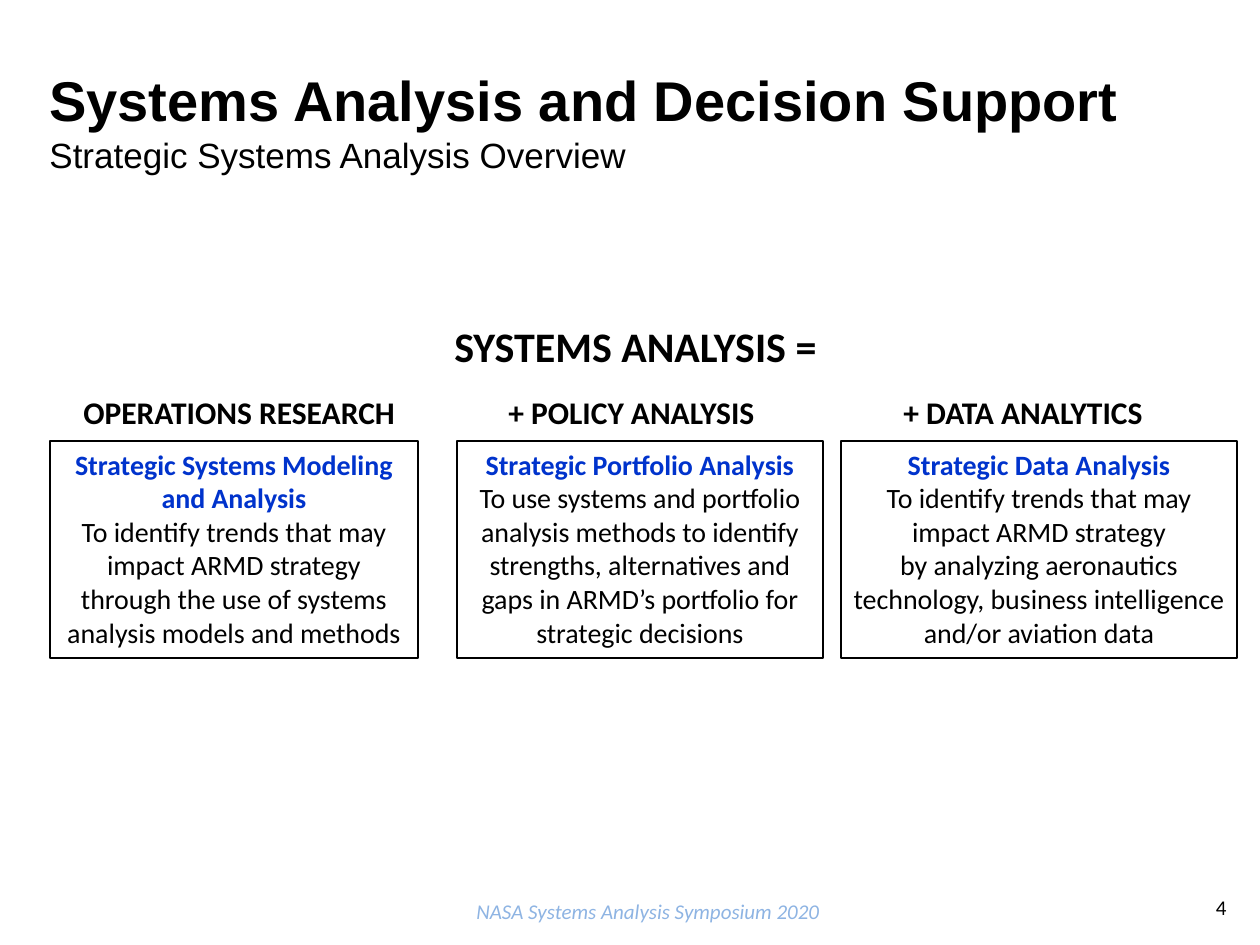
from dataclasses import dataclass
from typing import Any

from lxml import etree
from pptx import Presentation
from pptx.dml.color import RGBColor
from pptx.enum.shapes import MSO_SHAPE
from pptx.enum.text import MSO_ANCHOR, MSO_AUTO_SIZE, PP_ALIGN
from pptx.oxml.ns import qn
from pptx.util import Emu, Pt

LEFT, CENTER, RIGHT = PP_ALIGN.LEFT, PP_ALIGN.CENTER, PP_ALIGN.RIGHT
TOP, MIDDLE = MSO_ANCHOR.TOP, MSO_ANCHOR.MIDDLE
GROW, FIXED = MSO_AUTO_SIZE.SHAPE_TO_FIT_TEXT, MSO_AUTO_SIZE.NONE
RECT = MSO_SHAPE.RECTANGLE
BLACK = RGBColor(0x00, 0x00, 0x00)
BLUE = RGBColor(0x00, 0x33, 0xCC)
PALE = RGBColor(0x8E, 0xB4, 0xE3)
SCALE = 914400 / 126


@dataclass(frozen=True)
class Run:
    text: str
    size: int
    bold: bool = False
    color: RGBColor = BLACK
    face: str = "Calibri"
    slant: bool = False


@dataclass(frozen=True)
class Label:
    area: tuple[int, int, int, int]
    runs: tuple[Run, ...]
    align: PP_ALIGN = LEFT
    anchor: MSO_ANCHOR = MIDDLE
    size: MSO_AUTO_SIZE = FIXED
    wrap: bool = True
    tabs: tuple[int, ...] = ()


@dataclass(frozen=True)
class Card:
    left: int
    width: int
    title: str
    lines: tuple[str, ...]


LABELS = [
    Label((37, 40, 1105, 161), (
        Run("Systems Analysis and Decision Support", 32, True, face="Arial"),
        Run("Strategic Systems Analysis Overview", 20, face="Arial"))),
    Label((249, 886, 798, 50), (
        Run("NASA Systems Analysis Symposium 2020", 12, color=PALE, slant=True),), CENTER),
    Label((945, 882, 294, 50), (Run("4", 12),), RIGHT),
    Label((71, 387, 1187, 50), (
        Run("OPERATIONS RESEARCH\t+ POLICY ANALYSIS\t+ DATA ANALYTICS", 18, True),),
        anchor=TOP, size=GROW, tabs=(425, 820)),
    Label((442, 314, 401, 63), (Run("SYSTEMS ANALYSIS =", 24, True),),
          anchor=TOP, size=GROW, wrap=False),
]

CARDS = [
    Card(50, 368, "Strategic Systems Modeling and Analysis", (
        "To identify trends that may impact ARMD strategy",
        "through the use of systems analysis models and methods")),
    Card(457, 366, "Strategic Portfolio Analysis", (
        "To use systems and portfolio analysis methods to identify strengths, "
        "alternatives and gaps in ARMD’s portfolio for strategic decisions",)),
    Card(841, 396, "Strategic Data Analysis", (
        "To identify trends that may impact ARMD strategy",
        "by analyzing aeronautics technology, business intelligence "
        "and/or aviation data")),
]
CARD_TOP, CARD_HIGH = 441, 217


def px(count: int) -> Emu:
    return Emu(round(count * SCALE))


def apply(target: Any, values: dict[str, Any]) -> None:
    for name, value in values.items():
        setattr(target, name, value)


def write(para: Any, item: Run) -> None:
    run = para.add_run()
    run.text = item.text
    apply(run.font, {"name": item.face, "size": Pt(item.size),
                     "bold": item.bold, "italic": item.slant})
    run.font.color.rgb = item.color


def set_tabs(para: Any, stops: tuple[int, ...]) -> None:
    props = para._p.get_or_add_pPr()
    group = etree.SubElement(props, qn("a:tabLst"))
    for stop in stops:
        etree.SubElement(group, qn("a:tab"), pos=str(px(stop)), algn="l")


def draw_label(slide: Any, label: Label) -> None:
    frame = slide.shapes.add_textbox(*map(px, label.area)).text_frame
    apply(frame, {"word_wrap": label.wrap, "auto_size": label.size,
                  "vertical_anchor": label.anchor})
    para = frame.paragraphs[0]
    para.alignment = label.align
    if label.tabs:
        set_tabs(para, label.tabs)
    for index, item in enumerate(label.runs):
        if index:
            para.add_line_break()
        write(para, item)


def draw_card(slide: Any, card: Card) -> None:
    area = (card.left, CARD_TOP, card.width, CARD_HIGH)
    shape = slide.shapes.add_shape(RECT, *map(px, area))
    shape.shadow.inherit = False
    shape.fill.background()
    shape.line.color.rgb = BLACK
    shape.line.width = Pt(0.75)
    frame = shape.text_frame
    apply(frame, {"word_wrap": True, "auto_size": GROW, "vertical_anchor": TOP})
    items = [Run(card.title, 16, True, BLUE), *(Run(line, 16) for line in card.lines)]
    for index, item in enumerate(items):
        para = frame.add_paragraph() if index else frame.paragraphs[0]
        para.alignment = CENTER
        write(para, item)


def main() -> None:
    deck = Presentation()
    apply(deck, {"slide_width": px(1260), "slide_height": px(945)})
    slide = deck.slides.add_slide(deck.slide_layouts[6])
    for card in CARDS:
        draw_card(slide, card)
    for label in LABELS:
        draw_label(slide, label)
    deck.save("out.pptx")


if __name__ == "__main__":
    main()
